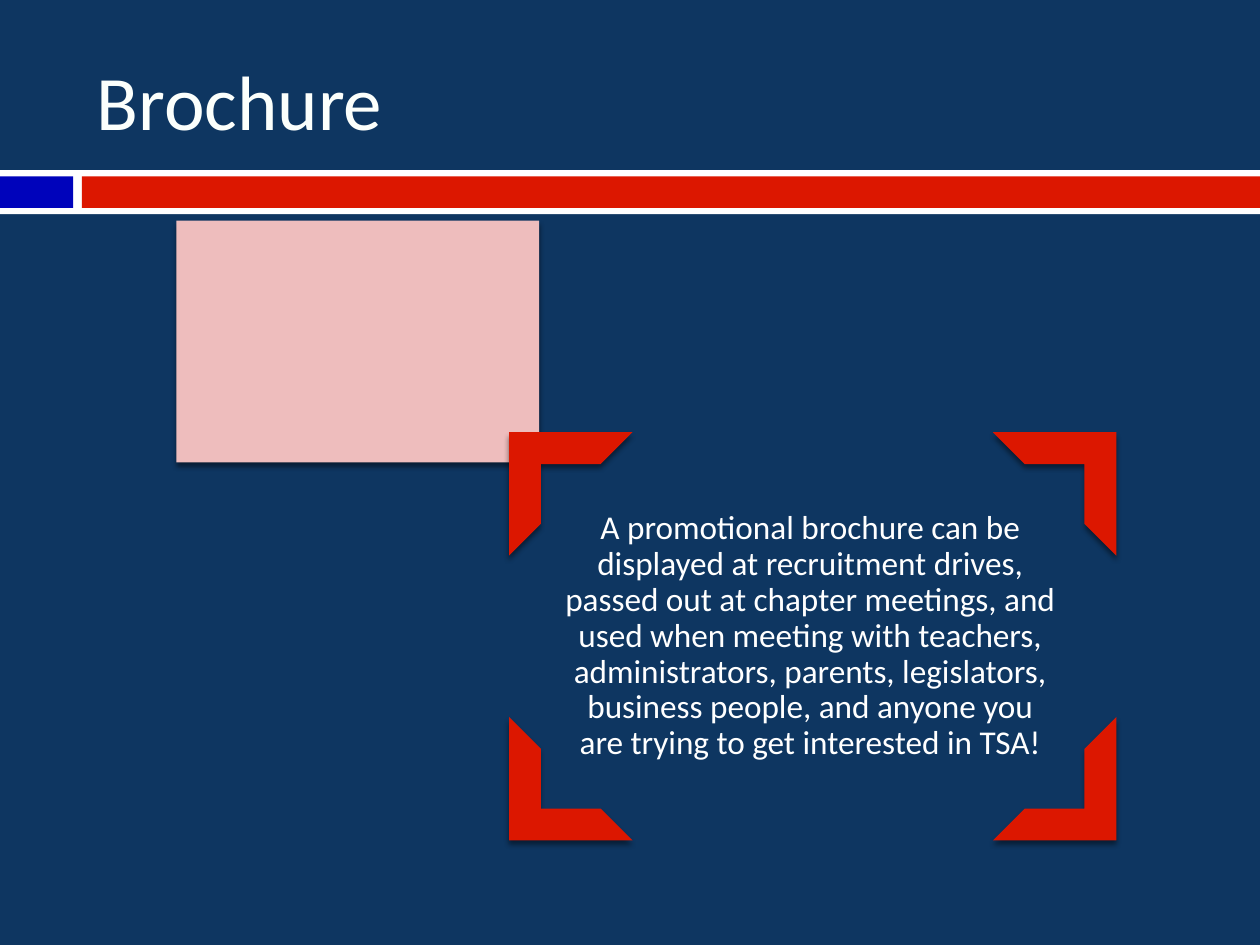
"""Builds the Brochure slide: a banded title, a picture panel and a framed statement."""
from lxml import etree
from pptx import Presentation
from pptx import util as u
from pptx.dml.color import RGBColor
from pptx.enum import shapes, text
from pptx.oxml import ns

WIDTH, HEIGHT = 10, 7.5
FONT = "Calibri"
COLORS = {"background": "0E3661", "white": "FFFFFF", "blue": "0003BB", "red": "DC1700",
          "pink": "EEBDBD", "title": "FBFFFC", "shadow": "000000"}
TITLE = "Brochure"
STATEMENT = ("A promotional brochure can be displayed at recruitment drives, passed out at "
             "chapter meetings, and used when meeting with teachers, administrators, parents, "
             "legislators, business people, and anyone you are trying to get interested in TSA!")
BAND = [("white", 0, 1.35, WIDTH, 0.35), ("blue", 0, 1.4, 0.58, 0.25),
        ("red", 0.65, 1.4, WIDTH - 0.65, 0.25)]
PANEL = ("pink", 1.4, 1.75, 2.88, 1.92)
FRAME_COLUMNS, FRAME_ROWS, CORNER = (4.04, 7.88), (3.43, 5.69), 0.98
CORNER_ROTATIONS = [[0, 90], [270, 180]]
CORNER_THICKNESS = 0.258


def add_block(slide, color, left, top, width, height, kind=shapes.MSO_SHAPE.RECTANGLE):
    shape = slide.shapes.add_shape(kind, *map(u.Inches, (left, top, width, height)))
    shape.fill.solid()
    shape.fill.fore_color.rgb = RGBColor.from_string(COLORS[color])
    shape.line.fill.background()
    shape.shadow.inherit = False
    return shape


def add_shadow(shape):
    effects = shape._element.spPr.find(ns.qn("a:effectLst"))
    shadow = etree.SubElement(effects, ns.qn("a:outerShdw"), blurRad=str(u.Pt(3)),
                              dist=str(u.Pt(2.4)), dir="5400000", rotWithShape="0")
    color = etree.SubElement(shadow, ns.qn("a:srgbClr"), val=COLORS["shadow"])
    etree.SubElement(color, ns.qn("a:alpha"), val="45000")


def add_text(slide, words, box, size, color, alignment, margins):
    frame = slide.shapes.add_textbox(*map(u.Inches, box)).text_frame
    frame.word_wrap = True
    frame.vertical_anchor = text.MSO_ANCHOR.MIDDLE
    frame.margin_left, frame.margin_top, frame.margin_right, frame.margin_bottom = map(
        u.Inches, margins)
    frame.text = words
    paragraph = frame.paragraphs[0]
    paragraph.alignment = alignment
    font = paragraph.runs[0].font
    font.name, font.size = FONT, u.Pt(size)
    font.color.rgb = RGBColor.from_string(COLORS[color])
    return paragraph


def main():
    presentation = Presentation()
    presentation.slide_width, presentation.slide_height = u.Inches(WIDTH), u.Inches(HEIGHT)
    slide = presentation.slides.add_slide(presentation.slide_layouts[6])
    slide.background.fill.solid()
    slide.background.fill.fore_color.rgb = RGBColor.from_string(COLORS["background"])

    for stripe in BAND:
        add_block(slide, *stripe)
    add_text(slide, TITLE, (0.67, 0.25, 8.92, 1.08), 44, "title",
             text.PP_ALIGN.LEFT, (0.1, 0.05, 0.1, 0.05))
    add_shadow(add_block(slide, *PANEL))
    statement = add_text(slide, STATEMENT, (4.39, 3.79, 4.08, 2.52), 19, "white",
                         text.PP_ALIGN.CENTER, (0.08,) * 4)
    statement.line_spacing = 0.9

    for top, rotations in zip(FRAME_ROWS, CORNER_ROTATIONS):
        for left, rotation in zip(FRAME_COLUMNS, rotations):
            corner = add_block(slide, "red", left, top, CORNER, CORNER,
                               shapes.MSO_SHAPE.HALF_FRAME)
            corner.rotation = rotation
            corner.adjustments[0] = corner.adjustments[1] = CORNER_THICKNESS
            add_shadow(corner)
    presentation.save("out.pptx")


if __name__ == "__main__":
    main()
